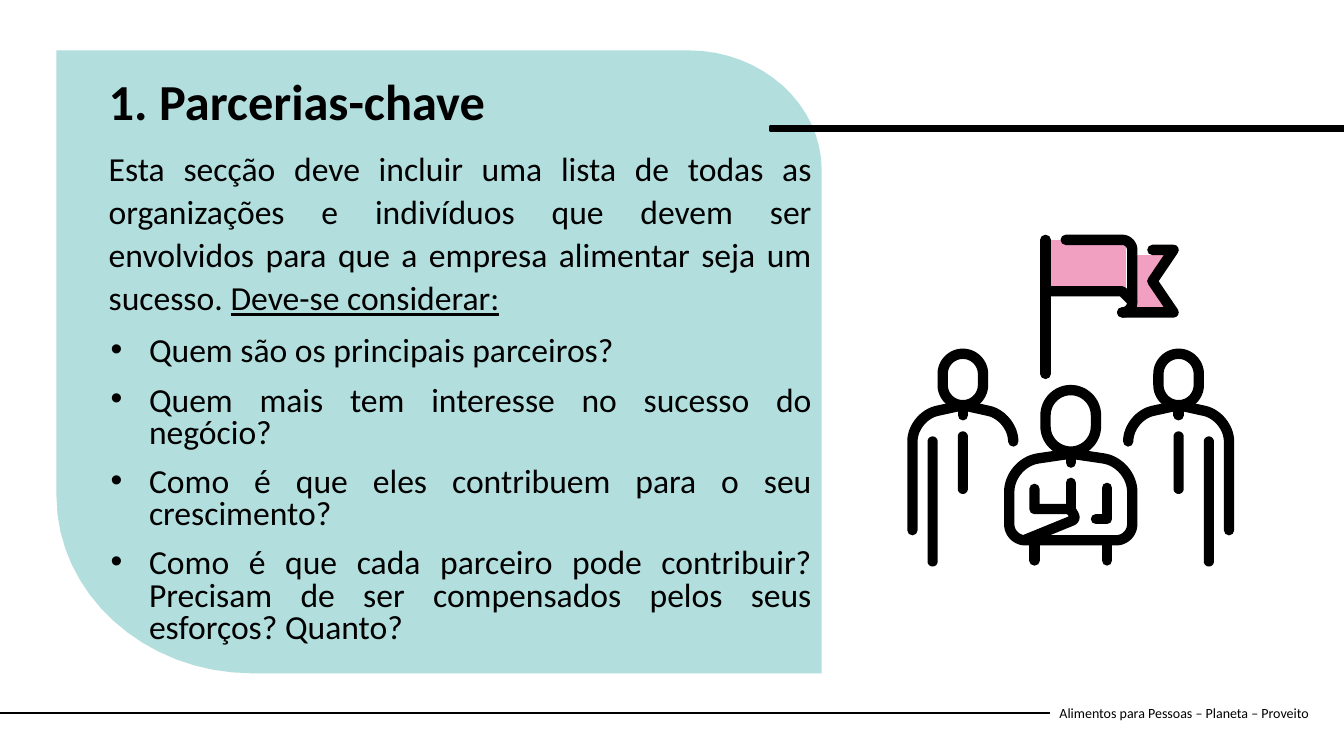
"""Build the slide on key partnerships with its team-and-flag illustration."""
import math

import lxml.etree
import pptx
import pptx.dml.color
import pptx.enum.shapes
import pptx.enum.text
import pptx.oxml.ns
import pptx.util

COLORS = {"ink": "000000", "panel": "B2DEDD", "flag": "F1A0C2"}
FONT = "Calibri"
WIDTH, HEIGHT = 13.33, 7.5
TITLE = "1. Parcerias-chave"
INTRO = [
    ("Esta secção deve incluir uma lista de todas as organizações e indivíduos que devem ser "
     "envolvidos para que a empresa alimentar seja um sucesso. ", False),
    ("Deve-se considerar:", True),
]
QUESTIONS = [
    "Quem são os principais parceiros?",
    "Quem mais tem interesse no sucesso do negócio?",
    "Como é que eles contribuem para o seu crescimento?",
    "Como é que cada parceiro pode contribuir? Precisam de ser compensados pelos seus esforços? Quanto?",
]
FOOTER = "Alimentos para Pessoas – Planeta – Proveito"

LEFT, TOP, RIGHT, BOTTOM = 0.56, 0.5, 8.15, 6.68
TEXT_LEFT, FOOTER_LEFT, FOOTER_LINE = 0.98, 10.41, 7.07
BAR_LEFT, BAR_TOP, BAR_BOTTOM = 7.64, 1.25, 1.3
PANEL = [(LEFT, TOP), (RIGHT, TOP, 1.32, 1.19), (RIGHT, BOTTOM), (LEFT, BOTTOM, 1.94, 1.76)]
BAR = [(BAR_LEFT, BAR_TOP), (WIDTH, BAR_TOP), (WIDTH, BAR_BOTTOM), (BAR_LEFT, BAR_BOTTOM)]

ICON_AXIS, ICON_TOP, STROKE = 10.62, 2.38, 7.4
FLAG_FILLS = [
    [(0.61, 0.15), (0.99, 0.15), (0.83, 0.42), (1.01, 0.68), (0.61, 0.7)],
    [(-0.2, 0), (0.55, 0), (0.55, 0.47), (-0.2, 0.47)],
]
FLAG = [
    [(-0.25, 0), (-0.25, 1.33)],
    [(-0.05, 0), (0.61, 0, 0.1), (0.61, 0.72, 0.1), (0.51, 0.72)],
    [(0.51, 0.72), (1.02, 0.72), (0.81, 0.41), (1.02, 0.1), (0.81, 0.1)],
    [(-0.25, 0.51), (0.51, 0.51), (0.61, 0.61)],
]
LEADER = [
    [(0, 2.12), (0, 2.21)],
    [(0, 2.41), (0, 2.67)],
    [(-0.44, 2.97), (0.05, 2.77, 0.04), (0, 2.67, 0.04), (-0.36, 2.67), (-0.36, 2.47)],
    [(-0.36, 2.98), (-0.36, 3.18)],
    [(0.36, 2.98), (0.36, 3.18)],
]
LEADER_BODY = [(0, 2.12), (0.61, 2.21, 0.29), (0.61, 2.98, 0.16), (-0.61, 2.98, 0.16), (-0.61, 2.21, 0.29)]
LEADER_HAND = [[(0.25, 2.77), (0.36, 2.77), (0.36, 2.46)]]
PARTNER_AXIS = -1.07
PARTNER = [
    [(-0.5, 2.88), (-0.5, 1.75, 0.25), (0, 1.64), (0.5, 1.75, 0.25), (0.5, 2)],
    [(0, 1.64), (0, 1.74)],
]
PARTNER_BARS = [(0, 1.9, 2.52), (-0.3, 1.95, 3.24)]


def inches(*values):
    return [pptx.util.Inches(value) for value in values]


def color(name):
    return pptx.dml.color.RGBColor.from_string(COLORS[name])


def assign(target, values):
    for name, value in values.items():
        setattr(target, name, value)


def toward(start, end, distance):
    share = distance / math.dist(start, end)
    return tuple(a + (b - a) * share for a, b in zip(start, end))


def outline(points):
    """Replace each corner that has a radius by a sampled curve."""
    result = []
    for index, (x, y, *radii) in enumerate(points):
        corner = (x, y)
        if not radii:
            result.append(corner)
            continue
        first = toward(corner, points[index - 1][:2], radii[0])
        last = toward(corner, points[(index + 1) % len(points)][:2], radii[-1])
        handles = (first, toward(first, corner, 0.55 * radii[0]), toward(last, corner, 0.55 * radii[-1]), last)
        for step in range(17):
            t = step / 16
            weights = ((1 - t) ** 3, 3 * t * (1 - t) ** 2, 3 * t * t * (1 - t), t ** 3)
            result.append(tuple(sum(w * h[axis] for w, h in zip(weights, handles)) for axis in (0, 1)))
    return result


def draw_outlines(page, closed, opened=()):
    builder = None
    contours = [(points, True) for points in closed] + [(points, False) for points in opened]
    for points, close in contours:
        start, *rest = [inches(*point) for point in outline(points)]
        if builder is None:
            builder = page.shapes.build_freeform(*start, scale=1.0)
        else:
            builder.move_to(*start)
        builder.add_line_segments(rest, close=close)
    shape = builder.convert_to_shape()
    shape.shadow.inherit = False
    return shape


def draw_area(page, points, name):
    shape = draw_outlines(page, [points])
    shape.fill.solid()
    shape.fill.fore_color.rgb = color(name)
    shape.line.fill.background()
    return shape


def ink_line(shape, width):
    shape.line.color.rgb = color("ink")
    shape.line.width = pptx.util.Pt(width)


def draw_strokes(page, opened, closed=()):
    shape = draw_outlines(page, closed, opened)
    shape.fill.background()
    ink_line(shape, STROKE)
    line = shape.line._get_or_add_ln()
    line.set("cap", "rnd")
    lxml.etree.SubElement(line, pptx.oxml.ns.qn("a:round"))


def place(points, axis=0, side=1):
    return [(ICON_AXIS + side * (axis + x), ICON_TOP + y, *radii) for x, y, *radii in points]


def capsule(half, top, bottom, middle=0):
    left, right = middle - half, middle + half
    return [(left, top, half), (right, top, half), (right, bottom, half), (left, bottom, half)]


def add_text_frame(page, *area):
    frame = page.shapes.add_textbox(*inches(*area)).text_frame
    frame.word_wrap = True
    return frame


def write(para, spans, size, bold=False, **layout):
    assign(para, layout)
    for text, underline in spans:
        span = para.add_run()
        span.text = text
        assign(span.font, {"name": FONT, "size": pptx.util.Pt(size), "bold": bold, "underline": underline})
        span.font.color.rgb = color("ink")


def add_bullet(para):
    properties = para._p.get_or_add_pPr()
    for name, value in (("marL", 0.4), ("indent", -0.38)):
        properties.set(name, str(pptx.util.Inches(value)))
    for tag, name, value in (("a:buFont", "typeface", "Arial"), ("a:buChar", "char", "•")):
        lxml.etree.SubElement(properties, pptx.oxml.ns.qn(tag)).set(name, value)


def draw_icon(page):
    for points in FLAG_FILLS:
        draw_area(page, place(points), "flag")
    draw_strokes(page, map(place, LEADER_HAND))
    draw_strokes(page, map(place, LEADER), map(place, (LEADER_BODY, capsule(0.25, 1.49, 2.1))))
    draw_strokes(page, map(place, FLAG))
    for side in (1, -1):
        head = place(capsule(0.2, 1.13, 1.64), PARTNER_AXIS, side)
        draw_strokes(page, [place(points, PARTNER_AXIS, side) for points in PARTNER], [head])
        for middle, top, bottom in PARTNER_BARS:
            draw_area(page, place(capsule(0.05, top, bottom, middle), PARTNER_AXIS, side), "ink")


def write_texts(page):
    point = pptx.util.Pt
    justify = pptx.enum.text.PP_ALIGN.JUSTIFY
    footer = add_text_frame(page, FOOTER_LEFT, 6.87, 2.73, 0.4)
    footer.vertical_anchor = pptx.enum.text.MSO_ANCHOR.MIDDLE
    write(footer.paragraphs[0], [(FOOTER, False)], 10)
    body = add_text_frame(page, TEXT_LEFT, 1.39, RIGHT - TEXT_LEFT, 4.33)
    write(body.paragraphs[0], INTRO, 24, alignment=justify, line_spacing=1.07,
          space_before=point(10), space_after=point(8))
    for question in QUESTIONS:
        para = body.add_paragraph()
        write(para, [(question, False)], 24, alignment=justify, line_spacing=0.8,
              space_before=point(6), space_after=point(6))
        add_bullet(para)
    title = add_text_frame(page, TEXT_LEFT, 0.71, 5.46, 1.09)
    write(title.paragraphs[0], [(TITLE, False)], 36, True, line_spacing=0.9, space_before=point(10))


def main():
    deck = pptx.Presentation()
    assign(deck, {"slide_width": pptx.util.Inches(WIDTH), "slide_height": pptx.util.Inches(HEIGHT)})
    page = deck.slides.add_slide(deck.slide_layouts[6])
    ends = inches(0, FOOTER_LINE, FOOTER_LEFT, FOOTER_LINE)
    rule = page.shapes.add_connector(pptx.enum.shapes.MSO_CONNECTOR.STRAIGHT, *ends)
    ink_line(rule, 1.5)
    lxml.etree.SubElement(rule._element.spPr, pptx.oxml.ns.qn("a:effectLst"))
    draw_area(page, PANEL, "panel")
    ink_line(draw_area(page, BAR, "ink"), 1.93)
    write_texts(page)
    draw_icon(page)
    deck.save("out.pptx")


if __name__ == "__main__":
    main()
